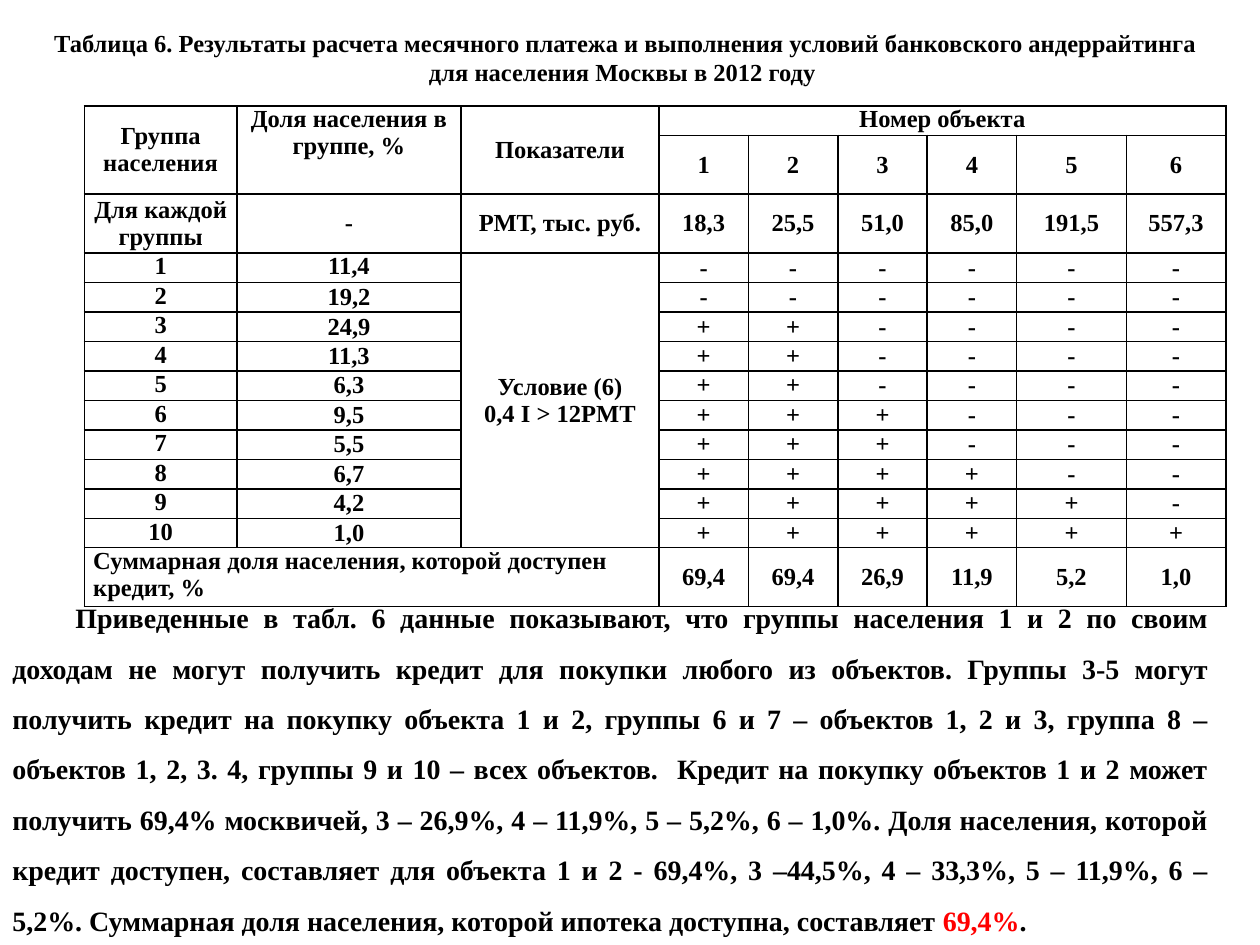
"""Build the slide with the mortgage access table and its summary."""
from dataclasses import dataclass

from lxml.etree import fromstring
from pptx import Presentation
from pptx.dml.color import RGBColor as Color
from pptx.enum.text import MSO_ANCHOR as Anchor
from pptx.enum.text import MSO_AUTO_SIZE as Fit
from pptx.enum.text import PP_ALIGN as Align
from pptx.util import Inches, Pt


@dataclass(frozen=True)
class Theme:
    font: str = "Times New Roman"
    ink: str = "000000"
    hot: str = "FF0000"
    small: int = 14
    large: int = 16
    rule: int = 1


THEME = Theme()
WIDE, HIGH = 10, 7.5
TITLE = (
    "Таблица 6. Результаты расчета месячного платежа и выполнения условий "
    "банковского андеррайтинга для населения Москвы в 2012 году "
)
HEADS = ["Группа населения", "Доля населения в группе, %", "Показатели"]
SHARES = ["11,4", "19,2", "24,9", "11,3", "6,3", "9,5", "5,5", "6,7", "4,2", "1,0"]
STARTS = [3, 3, 6, 8, 9, 10]
RULE = "Условие (6)\n0,4 I > 12PMT"
TOTAL = "Суммарная доля населения, которой доступен кредит, %"
BODY = [
    (
        "Приведенные в табл. 6 данные показывают, что группы населения 1 и 2 "
        "по своим доходам не могут получить кредит для покупки любого из "
        "объектов. Группы 3-5 могут получить кредит на покупку объекта 1 и 2, "
        "группы 6 и 7 – объектов 1, 2 и 3, группа 8 – объектов 1, 2, 3. 4, "
        "группы 9 и 10 – всех объектов.  Кредит на покупку объектов 1 и 2 "
        "может получить 69,4% москвичей, 3 – 26,9%, 4 – 11,9%, 5 – 5,2%, "
        "6 – 1,0%. Доля населения, которой кредит доступен, составляет для "
        "объекта 1 и 2 - 69,4%, 3 –44,5%, 4 – 33,3%, 5 – 11,9%, 6 – 5,2%. "
        "Суммарная доля населения, которой ипотека доступна, составляет ",
        THEME.ink,
    ),
    ("69,4%", THEME.hot),
    (".", THEME.ink),
]
GROUPS = [
    [str(num), share, RULE if num == 1 else ""]
    + ["+" if num >= start else "-" for start in STARTS]
    for num, share in enumerate(SHARES, 1)
]
ROWS = [
    HEADS + ["Номер объекта"] + [""] * 5,
    [""] * 3 + ["1", "2", "3", "4", "5", "6"],
    ["Для каждой группы", "-", "РМТ, тыс. руб.",
     "18,3", "25,5", "51,0", "85,0", "191,5", "557,3"],
    *GROUPS,
    [TOTAL, "", "", "69,4", "69,4", "26,9", "11,9", "5,2", "1,0"],
]
LAST = len(ROWS) - 1
SPANS = [(0, 0, 1, 0), (0, 1, 1, 1), (0, 2, 1, 2), (0, 3, 0, 8),
         (3, 2, LAST - 1, 2), (LAST, 0, LAST, 2)]
TOPS = {(0, 1), (0, 3), (3, 1), (LAST, 0)}
TOPS |= {(row, 0) for row in range(3, LAST)}
COLS = [1.21, 1.78, 1.57, 0.71, 0.71, 0.71, 0.71, 0.87, 0.79]
LINES = [1, 2, 2] + [1] * len(GROUPS) + [2]
GRID = (0.67, 0.84, sum(COLS), 3.97)
NS = "http://schemas.openxmlformats.org/drawingml/2006/main"


def style(run, size, ink=THEME.ink):
    font = run.font
    font.name, font.size, font.bold = THEME.font, Pt(size), True
    font.color.rgb = Color.from_string(ink)


def add_text(slide, box, parts, size, align):
    frame = slide.shapes.add_textbox(*map(Inches, box)).text_frame
    frame.word_wrap = True
    frame.auto_size = Fit.SHAPE_TO_FIT_TEXT
    frame.vertical_anchor = Anchor.MIDDLE
    para = frame.paragraphs[0]
    para.alignment = align
    for text, ink in parts:
        run = para.add_run()
        run.text = text
        style(run, size, ink)
    return para


def add_rules(cell):
    props = cell._tc.get_or_add_tcPr()
    for spot, side in enumerate("LRTB"):
        props.insert(spot, fromstring(
            f'<a:ln{side} xmlns:a="{NS}" w="{Pt(THEME.rule)}"><a:solidFill>'
            f'<a:srgbClr val="{THEME.ink}"/></a:solidFill></a:ln{side}>'
        ))


def fill_cell(cell, text, spot):
    cell.fill.background()
    add_rules(cell)
    cell.margin_left = cell.margin_right = Inches(0.07)
    cell.margin_top = cell.margin_bottom = 0
    cell.vertical_anchor = Anchor.TOP if spot in TOPS else Anchor.MIDDLE
    cell.text_frame.text = text
    for para in cell.text_frame.paragraphs:
        para.font.size = Pt(THEME.small)
        para.alignment = Align.LEFT if text == TOTAL else Align.CENTER
        for run in para.runs:
            style(run, THEME.small)


def add_grid(slide):
    table = slide.shapes.add_table(
        len(ROWS), len(COLS), *map(Inches, GRID)
    ).table
    table.first_row = table.horz_banding = False
    for col, width in zip(table.columns, COLS):
        col.width = Inches(width)
    unit = GRID[3] / sum(LINES)
    for row, count in zip(table.rows, LINES):
        row.height = Inches(unit * count)
    for r, texts in enumerate(ROWS):
        for c, text in enumerate(texts):
            fill_cell(table.cell(r, c), text, (r, c))
    for top, left, low, right in SPANS:
        table.cell(top, left).merge(table.cell(low, right))


def main():
    deck = Presentation()
    deck.slide_width, deck.slide_height = Inches(WIDE), Inches(HIGH)
    slide = deck.slides.add_slide(deck.slide_layouts[6])
    add_text(slide, (0.2, 0.17, 9.53, 0.57), [(TITLE, THEME.ink)],
             THEME.small, Align.CENTER)
    add_grid(slide)
    para = add_text(slide, (0, 4.57, 9.69, 2.93), BODY,
                    THEME.large, Align.JUSTIFY)
    para.line_spacing = 1.5
    props = para._p.get_or_add_pPr()
    props.set("marL", "0")
    props.set("indent", str(Inches(0.5)))
    deck.save("out.pptx")


if __name__ == "__main__":
    main()
